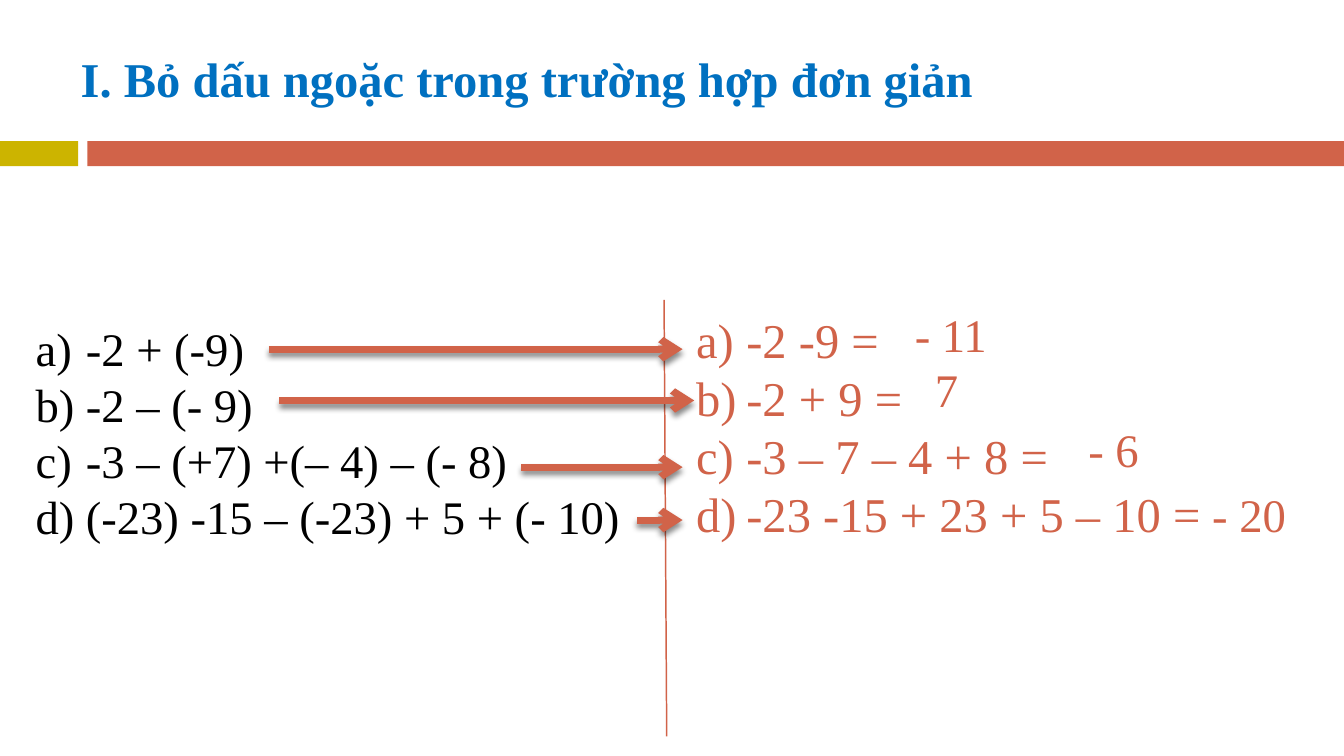
from lxml.etree import SubElement
from pptx import Presentation
from pptx.dml.color import RGBColor
from pptx.enum.shapes import MSO_CONNECTOR as Connector, MSO_SHAPE as Shape
from pptx.enum.text import MSO_ANCHOR as Anchor, MSO_AUTO_SIZE as AutoSize, PP_ALIGN as Align
from pptx.oxml.ns import qn
from pptx.util import Cm, Pt

FONT = "Times New Roman"
BLACK, BLUE, RED, OLIVE = "000000", "0070C0", "D16349", "CCB400"


def color(hex_string):
    return RGBColor.from_string(hex_string)


def place(shape, box):
    shape.left, shape.top, shape.width, shape.height = map(Cm, box)


def write(shape, lines, size, hex_color, bold=False):
    """Fill a shape with one left-aligned paragraph per line."""
    frame = shape.text_frame
    frame.text = "\n".join(lines)
    frame.word_wrap = True
    frame.auto_size = AutoSize.NONE
    frame.vertical_anchor = Anchor.TOP
    for paragraph in frame.paragraphs:
        paragraph.alignment = Align.LEFT
        paragraph.space_before = Pt(0)
        font = paragraph.font
        font.name, font.size, font.bold = FONT, Pt(size), bold
        font.color.rgb = color(hex_color)


def add_header(slide, box, title):
    """Title above a two-coloured band at the bottom of the box."""
    left, top, width, height = box
    band_height, tab, gap = 0.47, 1.48, 0.17
    band_top = top + height - band_height
    bar_left = left + tab + gap
    for bar_x, bar_width, fill in ((left, tab, OLIVE),
                                   (bar_left, left + width - bar_left, RED)):
        bar = slide.shapes.add_shape(Shape.RECTANGLE, 0, 0, 0, 0)
        place(bar, (bar_x, band_top, bar_width, band_height))
        bar.shadow.inherit = False
        bar.fill.solid()
        bar.fill.fore_color.rgb = color(fill)
        bar.line.fill.background()
    place(slide.shapes.title, (left + 1.27, top + 0.79, 17.98, 1.37))
    write(slide.shapes.title, [title], 26, BLUE, bold=True)


def add_lettered_list(placeholder, box, lines, size, hex_color):
    """List numbered a), b), c) ..."""
    place(placeholder, box)
    write(placeholder, lines, size, hex_color)
    indent = Cm(0.95)
    for paragraph in placeholder.text_frame.paragraphs:
        properties = paragraph._p.get_or_add_pPr()
        properties.set("marL", str(indent))
        properties.set("indent", str(-indent))
        bullet = properties.makeelement(qn("a:buAutoNum"), {"type": "alphaLcParenR"})
        properties.find(qn("a:defRPr")).addprevious(bullet)


def add_answers(slide, box, answers):
    """Results, each at its own offset in the box."""
    left, top, width, height = box
    for text, x, y in answers:
        answer = slide.shapes.add_textbox(0, 0, 0, 0)
        place(answer, (left + x, top + y, width, height))
        write(answer, [text], 25, RED)


def add_line(slide, start, end, width):
    line = slide.shapes.add_connector(Connector.STRAIGHT, *map(Cm, (*start, *end)))
    line.line.color.rgb = color(RED)
    line.line.width = Pt(width)
    SubElement(line._element.spPr, qn("a:effectLst"))
    return line


def add_arrow(slide, start, end):
    """Thick arrow with a soft shadow below it."""
    arrow = add_line(slide, start, end, 3.75)
    SubElement(arrow.line._get_or_add_ln(), qn("a:tailEnd"), type="arrow")
    effects = arrow._element.spPr.find(qn("a:effectLst"))
    shadow = SubElement(effects, qn("a:outerShdw"), blurRad=str(Pt(3)),
                        dist=str(Pt(2.4)), dir="5400000", rotWithShape="0")
    shade = SubElement(shadow, qn("a:srgbClr"), val=BLACK)
    SubElement(shade, qn("a:alpha"), val="45000")


def main():
    presentation = Presentation()
    presentation.slide_width, presentation.slide_height = Cm(25.4), Cm(14.29)
    slide = presentation.slides.add_slide(presentation.slide_layouts[3])

    add_header(slide, (0, 0, 25.4, 3.14), "I. Bỏ dấu ngoặc trong trường hợp đơn giản")
    add_line(slide, (12.55, 5.67), (12.6, 13.92), 0.79)

    # Exercises on the left, without brackets on the right
    add_lettered_list(slide.placeholders[1], (0.42, 5.92, 11.86, 4.35), [
        "-2 + (-9)", "-2 – (- 9)", "-3 – (+7) +(– 4) – (- 8)",
        "(-23) -15 – (-23) + 5 + (- 10)"], 25, BLACK)
    add_lettered_list(slide.placeholders[2], (12.9, 5.73, 10.6, 4.5), [
        "-2 -9 =", "-2 + 9 =", "-3 – 7 – 4 + 8 =", "-23 -15 + 23 + 5 – 10 ="], 26, RED)
    add_answers(slide, (17.04, 5.66, 2.33, 1.26), [
        ("- 11", 0, 0), ("7", 0.38, 1.04), ("- 6", 3.28, 2.18), ("- 20", 5.62, 3.4)])

    # Arrows from each exercise to its next step
    for start_x, end_x, y in ((5.08, 12.9, 6.6), (5.28, 13.12, 7.57),
                              (9.85, 12.9, 8.83), (12.04, 12.9, 9.83)):
        add_arrow(slide, (start_x, y), (end_x, y))

    presentation.save("out.pptx")


if __name__ == "__main__":
    main()
